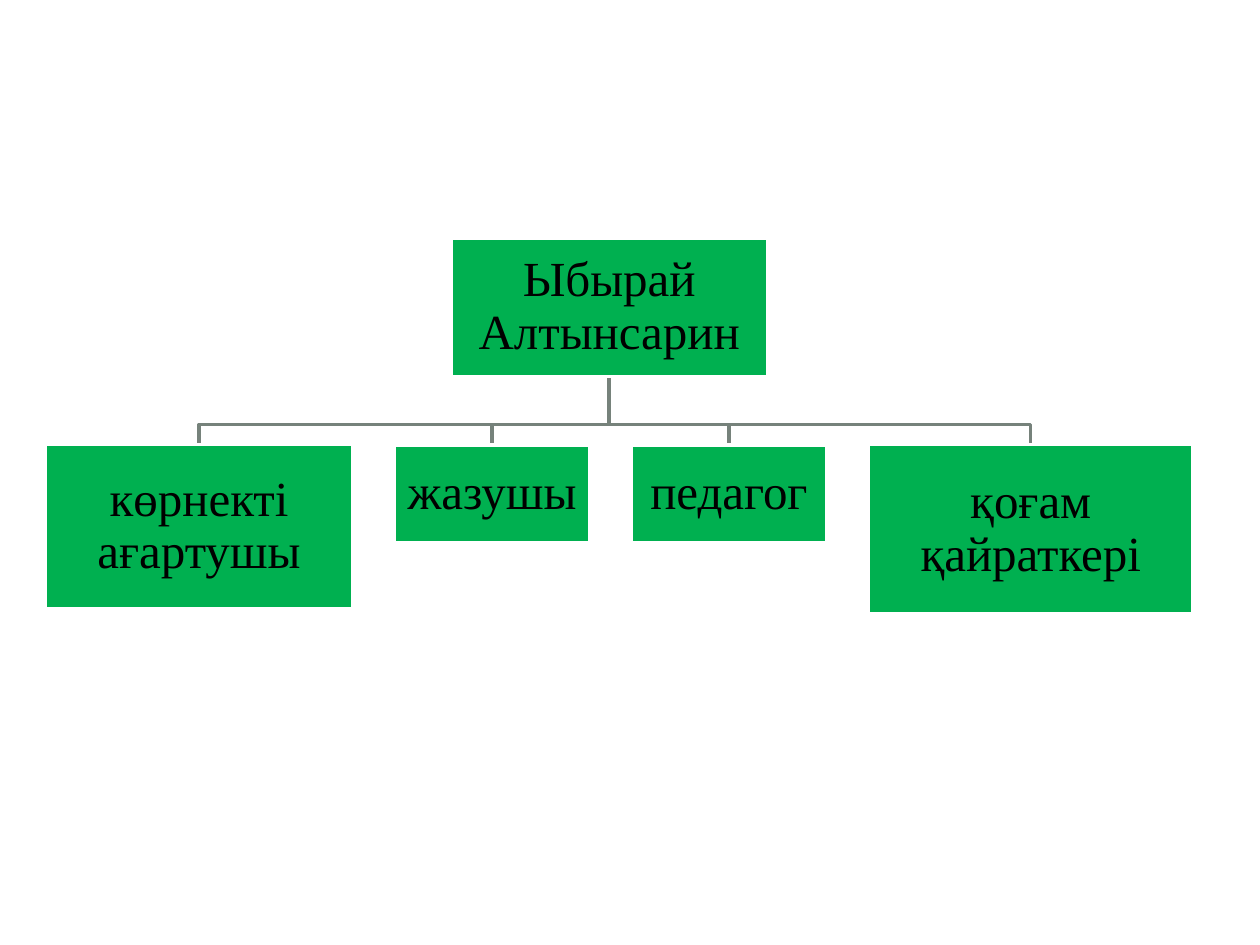
"""Build a slide with an organisation chart about Ыбырай Алтынсарин."""
import pptx
import pptx.dml.color
import pptx.enum.shapes
import pptx.enum.text
import pptx.util

Inches = pptx.util.Inches


def paint(color_format, value):
    color_format.rgb = pptx.dml.color.RGBColor.from_string(value)


def add_box(page, text, left, top, width, height):
    box = page.shapes.add_shape(
        pptx.enum.shapes.MSO_SHAPE.RECTANGLE,
        Inches(left), Inches(top), Inches(width), Inches(height),
    )
    box.shadow.inherit = False
    box.fill.solid()
    paint(box.fill.fore_color, "00B050")
    paint(box.line.color, "FFFFFF")
    box.line.width = pptx.util.Pt(2)
    frame = box.text_frame
    frame.word_wrap = True
    frame.vertical_anchor = pptx.enum.text.MSO_ANCHOR.MIDDLE
    frame.margin_left = frame.margin_right = Inches(0.02)
    frame.margin_top = frame.margin_bottom = Inches(0.02)
    para = frame.paragraphs[0]
    para.alignment = pptx.enum.text.PP_ALIGN.CENTER
    para.line_spacing = 0.9
    span = para.add_run()
    span.text = text
    span.font.name = "Times New Roman"
    span.font.size = pptx.util.Pt(28)
    paint(span.font.color, "000000")


deck = pptx.Presentation()
deck.slide_width = Inches(10)
deck.slide_height = Inches(7.5)
page = deck.slides.add_slide(deck.slide_layouts[6])

root_left, root_top, root_width, root_height = 3.58, 1.89, 2.51, 1.1
root_center = root_left + root_width / 2
root_bottom = root_top + root_height
branch_y = 3.37
child_top = 3.53
child_gap = 0.33
children = [
    ("көрнекті ағартушы", 2.44, 1.3),
    ("жазушы", 1.55, 0.78),
    ("педагог", 1.55, 0.78),
    ("қоғам қайраткері", 2.58, 1.34),
]

left = 0.36
for text, width, height in children:
    center = left + width / 2
    builder = page.shapes.build_freeform(Inches(root_center), Inches(root_bottom))
    builder.add_line_segments(
        [
            (Inches(root_center), Inches(branch_y)),
            (Inches(center), Inches(branch_y)),
            (Inches(center), Inches(child_top)),
        ],
        close=False,
    )
    branch = builder.convert_to_shape()
    branch.shadow.inherit = False
    branch.fill.background()
    paint(branch.line.color, "76827B")
    branch.line.width = pptx.util.Pt(2)
    add_box(page, text, left, child_top, width, height)
    left += width + child_gap

add_box(page, "Ыбырай Алтынсарин", root_left, root_top, root_width, root_height)

deck.save("out.pptx")
